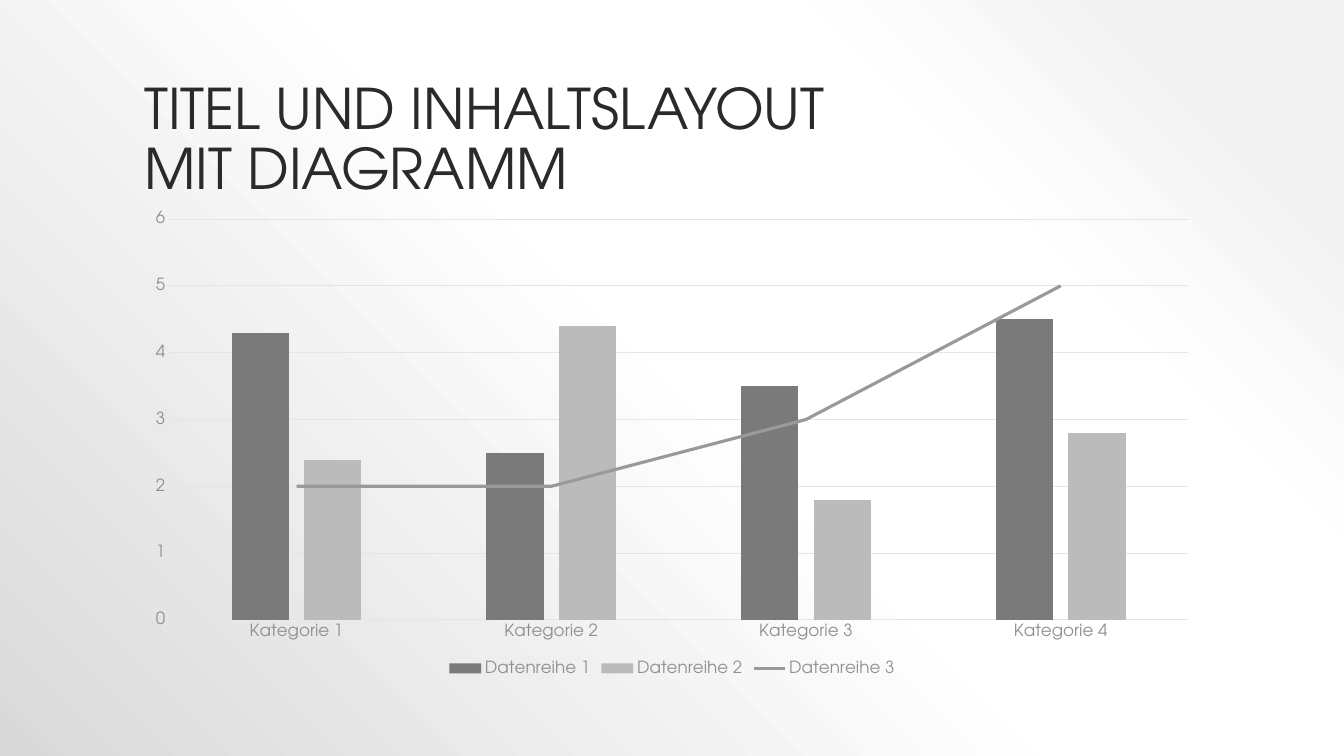
from copy import deepcopy
from dataclasses import dataclass

from lxml import etree
from pptx import Presentation
from pptx.chart import data as chart_data
from pptx.chart.chart import Chart
from pptx.dml.color import RGBColor
from pptx.enum import chart as chart_enum, text
from pptx.oxml import ns, parse_xml
from pptx.slide import Slide
from pptx.text.text import Font
from pptx.util import Pt

FONT = "TeX Gyre Adventor"
LABEL_COLOR = "909090"
GRID_COLOR = "E5E5E5"
LEFT, WIDTH = Pt(96), Pt(768)


@dataclass(frozen=True)
class DataSeries:
    name: str
    values: tuple[float, ...]
    color: str


CATEGORIES = [f"Kategorie {number}" for number in range(1, 5)]
COLUMNS = [
    DataSeries("Datenreihe 1", (4.3, 2.5, 3.5, 4.5), "7A7A7A"),
    DataSeries("Datenreihe 2", (2.4, 4.4, 1.8, 2.8), "BBBBBB"),
]
TREND = DataSeries("Datenreihe 3", (2, 2, 3, 5), "999999")
BACKGROUND_STOPS = [(10, "F2F2F2"), (28, "FFFFFF"), (48, "FFFFFF"), (100, "D9D9D9")]


def color(hex_value: str) -> RGBColor:
    return RGBColor.from_string(hex_value)


def style_font(font: Font, size: float, hex_value: str) -> None:
    font.name = FONT
    font.size = Pt(size)
    font.bold = False
    font.color.rgb = color(hex_value)


def style_background(slide: Slide) -> None:
    """Radial gradient centred on the top right corner."""
    slide.background.fill.solid()
    solid = slide.element.find(".//" + ns.qn("a:solidFill"))
    stops = "".join(
        f'<a:gs pos="{position * 1000}"><a:srgbClr val="{hex_value}"/></a:gs>'
        for position, hex_value in BACKGROUND_STOPS
    )
    gradient = parse_xml(
        f'<a:gradFill {ns.nsdecls("a")} rotWithShape="1"><a:gsLst>{stops}</a:gsLst>'
        '<a:path path="circle"><a:fillToRect l="100000" b="100000"/></a:path></a:gradFill>'
    )
    solid.getparent().replace(solid, gradient)


def add_title(slide: Slide, title: str) -> None:
    frame = slide.shapes.add_textbox(LEFT, Pt(21.6), WIDTH, Pt(126)).text_frame
    frame.word_wrap = True
    frame.vertical_anchor = text.MSO_ANCHOR.BOTTOM
    frame.text = title
    paragraph = frame.paragraphs[0]
    paragraph.line_spacing = 0.9
    for run in paragraph.runs:
        style_font(run.font, 40, "2A2A2A")


def move_last_series_to_line(chart: Chart) -> None:
    """Put the last column series into a line plot on the same axes."""
    bar_plot = chart.element.find(".//" + ns.qn("c:barChart"))
    series = bar_plot.findall(ns.qn("c:ser"))[-1]
    for bar_only in series.findall(ns.qn("c:invertIfNegative")):
        series.remove(bar_only)
    line_plot = parse_xml(
        f'<c:lineChart {ns.nsdecls("c")}><c:grouping val="standard"/>'
        '<c:varyColors val="0"/></c:lineChart>'
    )
    line_plot.append(series)
    etree.SubElement(line_plot, ns.qn("c:marker")).set("val", "1")
    for axis_id in bar_plot.findall(ns.qn("c:axId")):
        line_plot.append(deepcopy(axis_id))
    bar_plot.addnext(line_plot)


def style_axes(chart: Chart) -> None:
    category_axis, value_axis = chart.category_axis, chart.value_axis
    for axis in (category_axis, value_axis):
        axis.major_tick_mark = chart_enum.XL_TICK_MARK.NONE
        axis.minor_tick_mark = chart_enum.XL_TICK_MARK.NONE
        style_font(axis.tick_labels.font, 12, LABEL_COLOR)
    value_axis.minimum_scale, value_axis.maximum_scale = 0, 6
    value_axis.major_unit = 1
    value_axis.has_major_gridlines = True
    value_axis.format.line.fill.background()
    for line in (category_axis.format.line, value_axis.major_gridlines.format.line):
        line.color.rgb = color(GRID_COLOR)
        line.width = Pt(0.75)


def add_combined_chart(slide: Slide) -> None:
    contents = chart_data.CategoryChartData()
    contents.categories = CATEGORIES
    for item in [*COLUMNS, TREND]:
        contents.add_series(item.name, item.values)
    chart = slide.shapes.add_chart(
        chart_enum.XL_CHART_TYPE.COLUMN_CLUSTERED, LEFT, Pt(144), WIDTH, Pt(342), contents
    ).chart
    chart.has_title = False
    style_font(chart.font, 10, "545454")
    move_last_series_to_line(chart)
    column_plot, line_plot = chart.plots

    # Columns
    column_plot.gap_width = 219
    column_plot.overlap = -27
    column_plot.vary_by_categories = False
    for series, item in zip(column_plot.series, COLUMNS):
        series.format.fill.solid()
        series.format.fill.fore_color.rgb = color(item.color)

    # Line
    trend = line_plot.series[0]
    trend.smooth = False
    trend.marker.style = chart_enum.XL_MARKER_STYLE.NONE
    trend.format.line.color.rgb = color(TREND.color)
    trend.format.line.width = Pt(2.25)

    # Axes and legend
    style_axes(chart)
    chart.has_legend = True
    chart.legend.position = chart_enum.XL_LEGEND_POSITION.BOTTOM
    chart.legend.include_in_layout = False
    style_font(chart.legend.font, 12, LABEL_COLOR)


def main() -> None:
    presentation = Presentation()
    presentation.slide_width, presentation.slide_height = Pt(960), Pt(540)
    slide = presentation.slides.add_slide(presentation.slide_layouts[6])
    style_background(slide)
    add_title(slide, "TITEL UND INHALTSLAYOUT\vMIT DIAGRAMM")
    add_combined_chart(slide)
    presentation.save("out.pptx")


if __name__ == "__main__":
    main()
